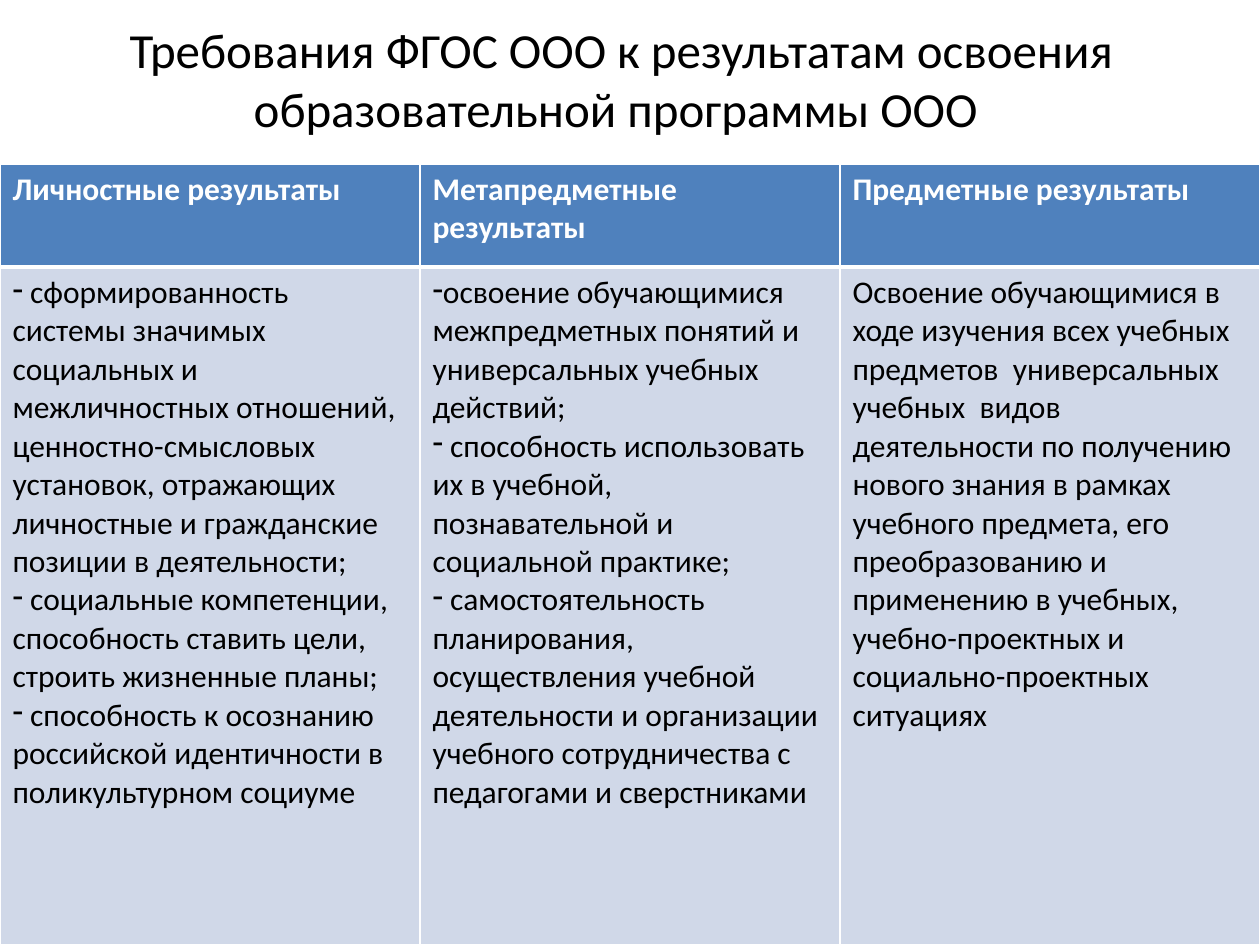
from pptx import Presentation
from pptx.dml.color import RGBColor
from pptx.enum.text import MSO_ANCHOR, PP_ALIGN
from pptx.oxml.ns import qn
from pptx.util import Inches, Pt
from lxml import etree

CENTER, MIDDLE = PP_ALIGN.CENTER, MSO_ANCHOR.MIDDLE

# Content: each column has a head, a bullet mark and its paragraphs
TITLE = "Требования ФГОС ООО к результатам освоения образовательной программы ООО "
COLUMNS = [
    ("Личностные результаты", "-", [
        " сформированность системы значимых социальных и межличностных отношений, "
        "ценностно-смысловых установок, отражающих личностные и гражданские "
        "позиции в деятельности;",
        " социальные компетенции, способность ставить цели, строить жизненные планы;",
        " способность к осознанию  российской идентичности в поликультурном социуме",
    ]),
    ("Метапредметные результаты", "-", [
        "освоение обучающимися межпредметных понятий и универсальных учебных действий;",
        " способность использовать их в учебной, познавательной и социальной практике;",
        " самостоятельность планирования, осуществления учебной деятельности "
        "и организации учебного сотрудничества с педагогами и сверстниками",
    ]),
    ("Предметные результаты", None, [
        "Освоение обучающимися в ходе изучения всех учебных предметов  универсальных "
        "учебных  видов деятельности по получению нового знания в рамках учебного "
        "предмета, его преобразованию и применению в учебных, учебно-проектных "
        "и социально-проектных ситуациях",
    ]),
]
THEME = {
    "font": "Calibri", "title": 28, "cell": 18,
    "dark": "000000", "light": "FFFFFF", "head": "4F81BD", "body": "D0D8E8",
    "line": 1, "rule": 3,
}
WIDTH, HEIGHT = 10, 7.5
TOP, HEAD = 1.3, 0.82


def style(para, size, color, bold=False):
    font = para.font
    font.name, font.size, font.bold = THEME["font"], Pt(size), bold
    font.color.rgb = RGBColor.from_string(color)


def add_bullet(para, mark):
    props = para._p.get_or_add_pPr()
    props.set("marL", "0")
    props.set("indent", "0")
    etree.SubElement(props, qn("a:buChar")).set("char", mark)


def add_borders(cell, top, bottom):
    props = cell._tc.get_or_add_tcPr()
    side = THEME["line"]
    for tag, width in (("lnL", side), ("lnR", side), ("lnT", top), ("lnB", bottom)):
        line = etree.SubElement(props, qn("a:" + tag), w=str(Pt(width)))
        fill = etree.SubElement(line, qn("a:solidFill"))
        etree.SubElement(fill, qn("a:srgbClr"), val=THEME["light"])


def fill_cell(cell, texts, fill, color, top, bottom, bold=False, mark=None):
    add_borders(cell, top, bottom)
    cell.fill.solid()
    cell.fill.fore_color.rgb = RGBColor.from_string(fill)
    cell.text = "\n".join(texts)
    for para in cell.text_frame.paragraphs:
        style(para, THEME["cell"], color, bold)
        if mark:
            add_bullet(para, mark)


deck = Presentation()
deck.slide_width, deck.slide_height = Inches(WIDTH), Inches(HEIGHT)
slide = deck.slides.add_slide(deck.slide_layouts[5])

# Title
title = slide.shapes.title
title.left, title.top = Inches(0.43), Inches(0)
title.width, title.height = Inches(9), Inches(1.25)
title.text = TITLE
title.text_frame.vertical_anchor = MIDDLE
para = title.text_frame.paragraphs[0]
para.alignment = CENTER
style(para, THEME["title"], THEME["dark"])

# Table of results
table = slide.shapes.add_table(
    2, len(COLUMNS), Inches(0), Inches(TOP), Inches(WIDTH), Inches(HEIGHT - TOP)
).table
table.rows[0].height = Inches(HEAD)
table.rows[1].height = Inches(HEIGHT - TOP - HEAD)
line, rule = THEME["line"], THEME["rule"]
for col, (head, mark, texts) in enumerate(COLUMNS):
    fill_cell(table.cell(0, col), [head], THEME["head"], THEME["light"],
              line, rule, bold=True)
    fill_cell(table.cell(1, col), texts, THEME["body"], THEME["dark"],
              rule, line, mark=mark)

deck.save("out.pptx")
